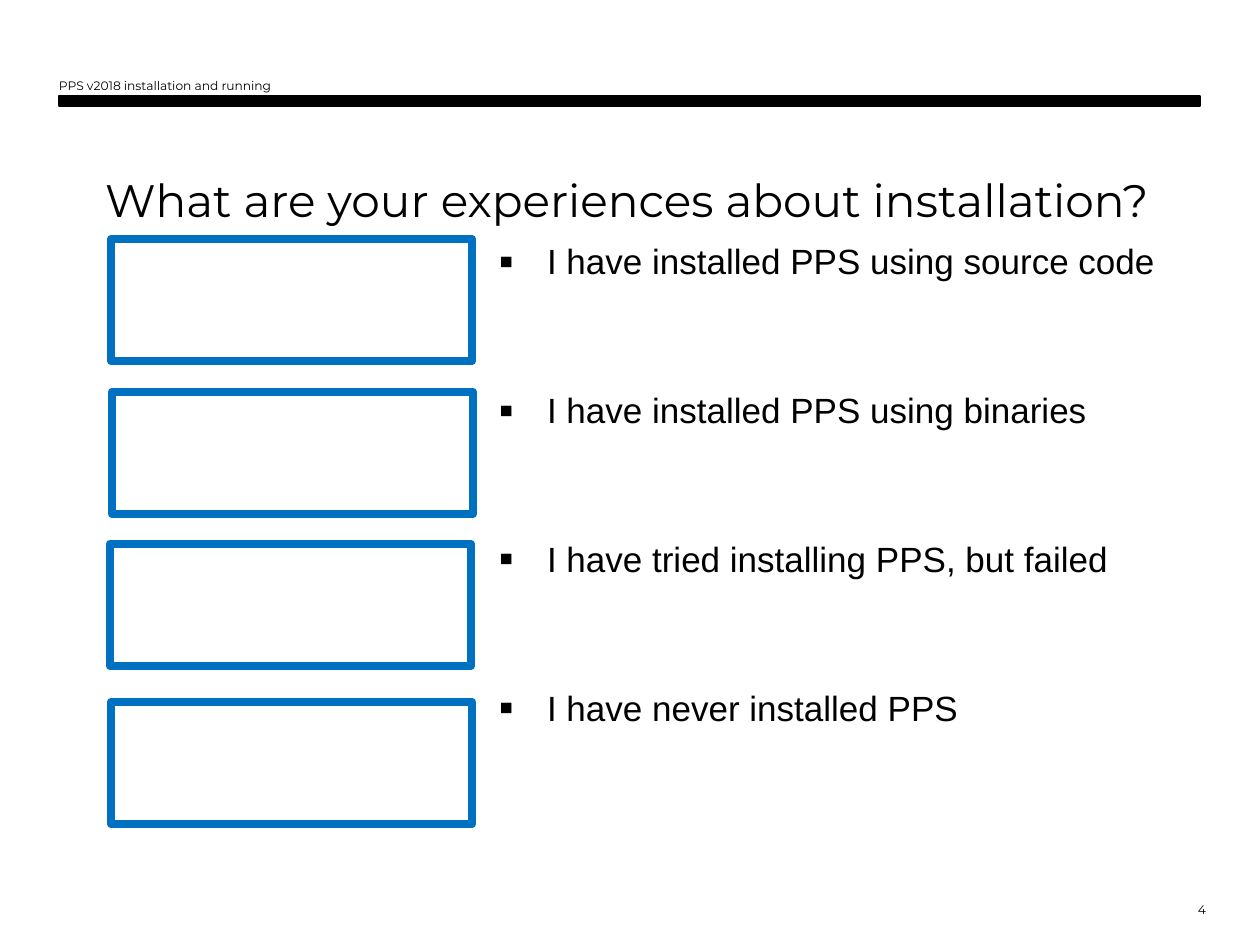
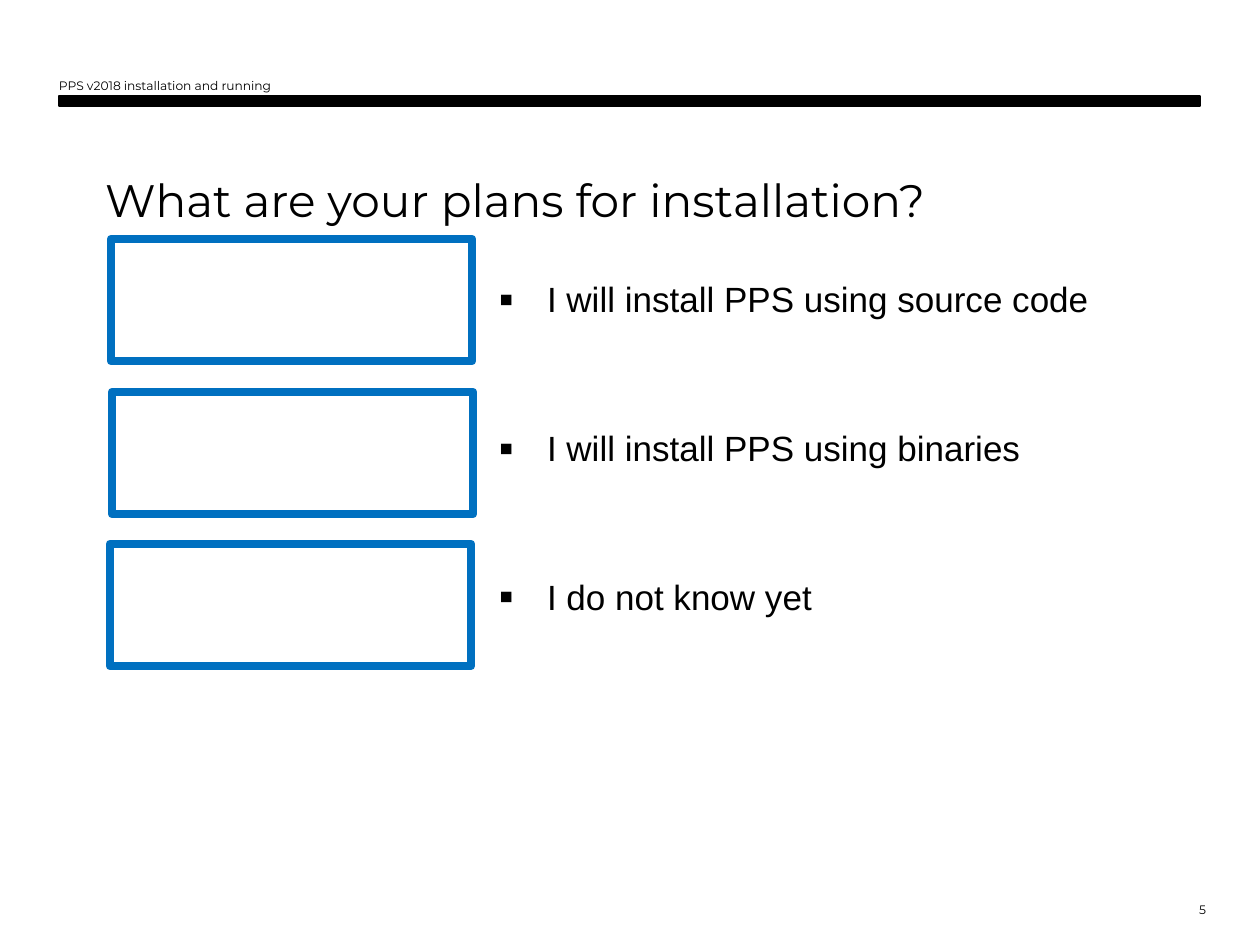
"""Build the two installation poll slides of the PPS course."""
from dataclasses import dataclass

from lxml import etree
from pptx import Presentation
from pptx.dml.color import RGBColor
from pptx.enum.shapes import MSO_SHAPE
from pptx.enum.text import MSO_ANCHOR, PP_ALIGN
from pptx.oxml.ns import qn
from pptx.util import Emu, Pt

RECT = MSO_SHAPE.RECTANGLE
TOP, BOTTOM = MSO_ANCHOR.TOP, MSO_ANCHOR.BOTTOM
LEFT, RIGHT = PP_ALIGN.LEFT, PP_ALIGN.RIGHT
EMU_PER_PX = 914400 / 126
HEADER = "PPS v2018 installation and running"
ANSWER_BOXES = [(111, 239), (112, 392), (110, 544), (111, 702)]
BOX_W, BOX_H = 361, 122
BULLET_INDENT = 48


@dataclass(frozen=True)
class Theme:
    ink: RGBColor = RGBColor(0, 0, 0)
    frame: RGBColor = RGBColor(0x00, 0x70, 0xC0)
    title_font: str = "Montserrat"
    body_font: str = "Arial"
    title_size: int = 26
    body_size: int = 20
    small_size: int = 7
    bar_line: float = 0.75
    frame_line: int = 5
    option_gap: int = 61


THEME = Theme()
SLIDES = [
    (4, "What are your experiences about installation?", 240, [
        "I have installed PPS using source code",
        "I have installed PPS using binaries",
        "I have tried installing PPS, but failed",
        "I have never installed PPS",
    ]),
    (5, "What are your plans for installation?", 278, [
        "I will install PPS using source code",
        "I will install PPS using binaries",
        "I do not know yet",
    ]),
]


def px(n):
    return Emu(round(n * EMU_PER_PX))


def add_rect(slide, x, y, w, h, color, weight, filled=False):
    sp = slide.shapes.add_shape(RECT, px(x), px(y), px(w), px(h))
    sp.shadow.inherit = False
    if filled:
        sp.fill.solid()
        sp.fill.fore_color.rgb = color
    else:
        sp.fill.background()
    sp.line.color.rgb = color
    sp.line.width = Pt(weight)
    etree.SubElement(sp.line._get_or_add_ln(), qn("a:round"))


def add_frame(slide, x, y, w, h, anchor=TOP):
    tf = slide.shapes.add_textbox(px(x), px(y), px(w), px(h)).text_frame
    tf.word_wrap = True
    tf.vertical_anchor = anchor
    tf.margin_left = tf.margin_right = tf.margin_top = tf.margin_bottom = 0
    return tf


def add_run(p, text, font, size):
    r = p.add_run()
    r.text = text
    r.font.name = font
    r.font.size = Pt(size)
    r.font.color.rgb = THEME.ink


def add_line(slide, text, x, y, w, h, size, align=LEFT, anchor=TOP):
    p = add_frame(slide, x, y, w, h, anchor).paragraphs[0]
    p.alignment = align
    add_run(p, text, THEME.title_font, size)


def set_bullet(p):
    pPr = p._p.get_or_add_pPr()
    pPr.set("marL", str(px(BULLET_INDENT)))
    pPr.set("indent", str(-px(BULLET_INDENT)))
    etree.SubElement(pPr, qn("a:buSzPct"), val="120000")
    etree.SubElement(pPr, qn("a:buFont"), typeface=THEME.body_font)
    etree.SubElement(pPr, qn("a:buChar"), char="▪")


def add_options(slide, options, top):
    tf = add_frame(slide, 499, top, 672, 856 - top)
    for i, option in enumerate(options):
        p = tf.add_paragraph() if i else tf.paragraphs[0]
        set_bullet(p)
        if i:
            p.space_before = Pt(THEME.option_gap)
        add_run(p, option, THEME.body_font, THEME.body_size)


def add_poll_slide(prs, number, title, options_top, options):
    slide = prs.slides.add_slide(prs.slide_layouts[6])
    add_rect(slide, 59, 96, 1141, 10, THEME.ink, THEME.bar_line, filled=True)
    add_line(slide, title, 105, 115, 1052, 112, THEME.title_size, anchor=BOTTOM)
    add_options(slide, options, options_top)
    add_line(slide, HEADER, 59, 78, 945, 15, THEME.small_size)
    add_line(slide, str(number), 1135, 902, 71, 15, THEME.small_size, RIGHT)
    for x, y in ANSWER_BOXES[:len(options)]:
        add_rect(slide, x, y, BOX_W, BOX_H, THEME.frame, THEME.frame_line)


def main():
    prs = Presentation()
    prs.slide_width, prs.slide_height = px(1260), px(945)
    for content in SLIDES:
        add_poll_slide(prs, *content)
    prs.save("out.pptx")


if __name__ == "__main__":
    main()
